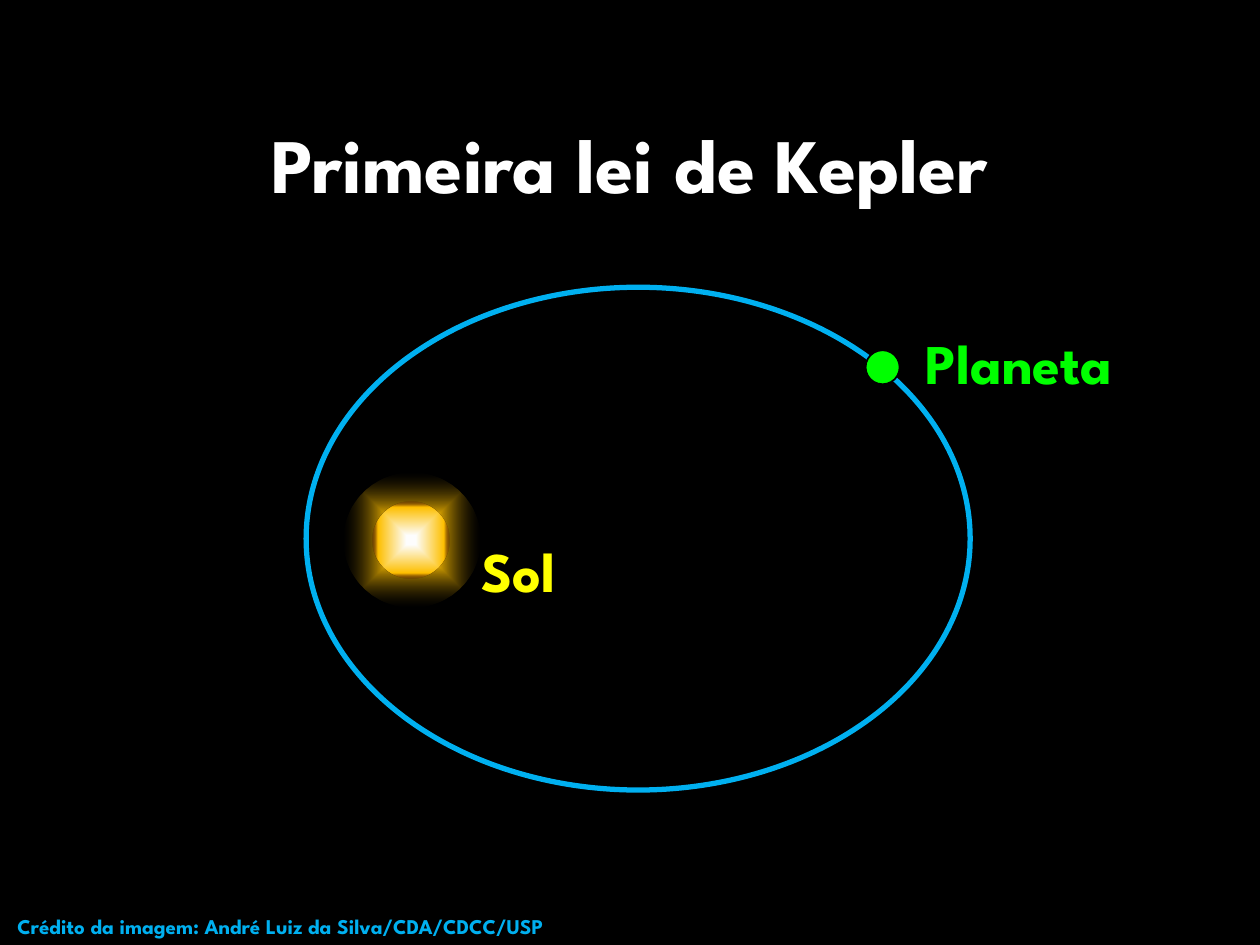
from lxml import etree
from pptx import Presentation
from pptx.dml.color import RGBColor
from pptx.enum.shapes import MSO_SHAPE as Shape
from pptx.enum.text import MSO_ANCHOR as Anchor, MSO_AUTO_SIZE as Fit, PP_ALIGN as Align
from pptx.oxml import parse_xml
from pptx.oxml.ns import nsdecls, qn
from pptx.util import Inches, Pt

FONT = "League Spartan"
BLUE, GREEN, YELLOW = "00B0F0", "00FF00", "FFFF00"


def paint(target, color):
    """Give a fill a solid colour."""
    target.solid()
    target.fore_color.rgb = RGBColor.from_string(color)


def write(frame, text, size=32, color="FFFFFF", align=Align.CENTER, wrap=True):
    frame.word_wrap = wrap
    para = frame.paragraphs[0]
    para.alignment = align
    run = para.add_run()
    run.text = text
    font = run.font
    font.name, font.size, font.bold = FONT, Pt(size), True
    paint(font.fill, color)


def label(slide, box, text, **style):
    frame = slide.shapes.add_textbox(*map(Inches, box)).text_frame
    write(frame, text, **style)
    frame.auto_size = Fit.SHAPE_TO_FIT_TEXT


def ellipse(slide, box, fill=None, line=None, width=1):
    shape = slide.shapes.add_shape(Shape.OVAL, *map(Inches, box))
    shape.shadow.inherit = False
    if fill:
        paint(shape.fill, fill)
    else:
        shape.fill.background()
    if line:
        paint(shape.line.fill, line)
        shape.line.width = Pt(width)
    else:
        shape.line.fill.background()
    return shape


def glow(slide, box, stops, alpha):
    """Ellipse shaded from its centre, with a see-through last stop."""
    shape = ellipse(slide, box)
    grad = parse_xml(
        f'<a:gradFill {nsdecls("a")} rotWithShape="1"><a:gsLst/><a:path path="shape">'
        '<a:fillToRect l="50000" t="50000" r="50000" b="50000"/></a:path></a:gradFill>')
    for pos, color in stops:
        stop = etree.SubElement(grad[0], qn("a:gs"), pos=str(pos * 1000))
        tone = etree.SubElement(stop, qn("a:srgbClr"), val=color)
    etree.SubElement(tone, qn("a:alpha"), val=str(alpha * 1000))
    props = shape.element.spPr
    props.replace(props.find(qn("a:noFill")), grad)


def heading(slide, box):
    title = slide.shapes.title
    title.left, title.top, title.width, title.height = map(Inches, box)
    title.text_frame.vertical_anchor = Anchor.MIDDLE
    write(title.text_frame, "Primeira lei de Kepler", size=44)


def orbit(slide, box):
    x, y, w, h = box
    # Halo, path and planet
    glow(slide, (x + 0.3, y + 1.47, 1.08, 1.07),
         [(7, "FFFFFF"), (32, "FFC000"), (100, "000000")], 23)
    ellipse(slide, box, line=BLUE, width=3)
    label(slide, (x + 4.74, y + 0.28, 1.84, 0.64), "Planeta", color=GREEN, wrap=False)
    ellipse(slide, (x + 4.44, y + 0.5, 0.27, 0.27), fill=GREEN, line="000000")
    # Sun
    label(slide, (x + 1.13, y + 1.93, 1.11, 0.64), "Sol", color=YELLOW)
    glow(slide, (x + 0.53, y + 1.7, 0.61, 0.61),
         [(12, "FFFFFF"), (85, "FFC000"), (100, "4D0808")], 17)


def credit(slide, box):
    label(slide, box, "Crédito da imagem: André Luiz da Silva/CDA/CDCC/USP",
          size=12, color=BLUE, align=Align.LEFT)


def main():
    deck = Presentation()
    deck.slide_width, deck.slide_height = Inches(10), Inches(7.5)
    slide = deck.slides.add_slide(deck.slide_layouts[5])
    paint(slide.background.fill, "000000")
    heading(slide, (0.75, 0.67, 8.5, 1.25))
    orbit(slide, (2.43, 2.28, 5.27, 3.99))
    credit(slide, (0.04, 7.2, 5.28, 0.3))
    deck.save("out.pptx")


if __name__ == "__main__":
    main()
